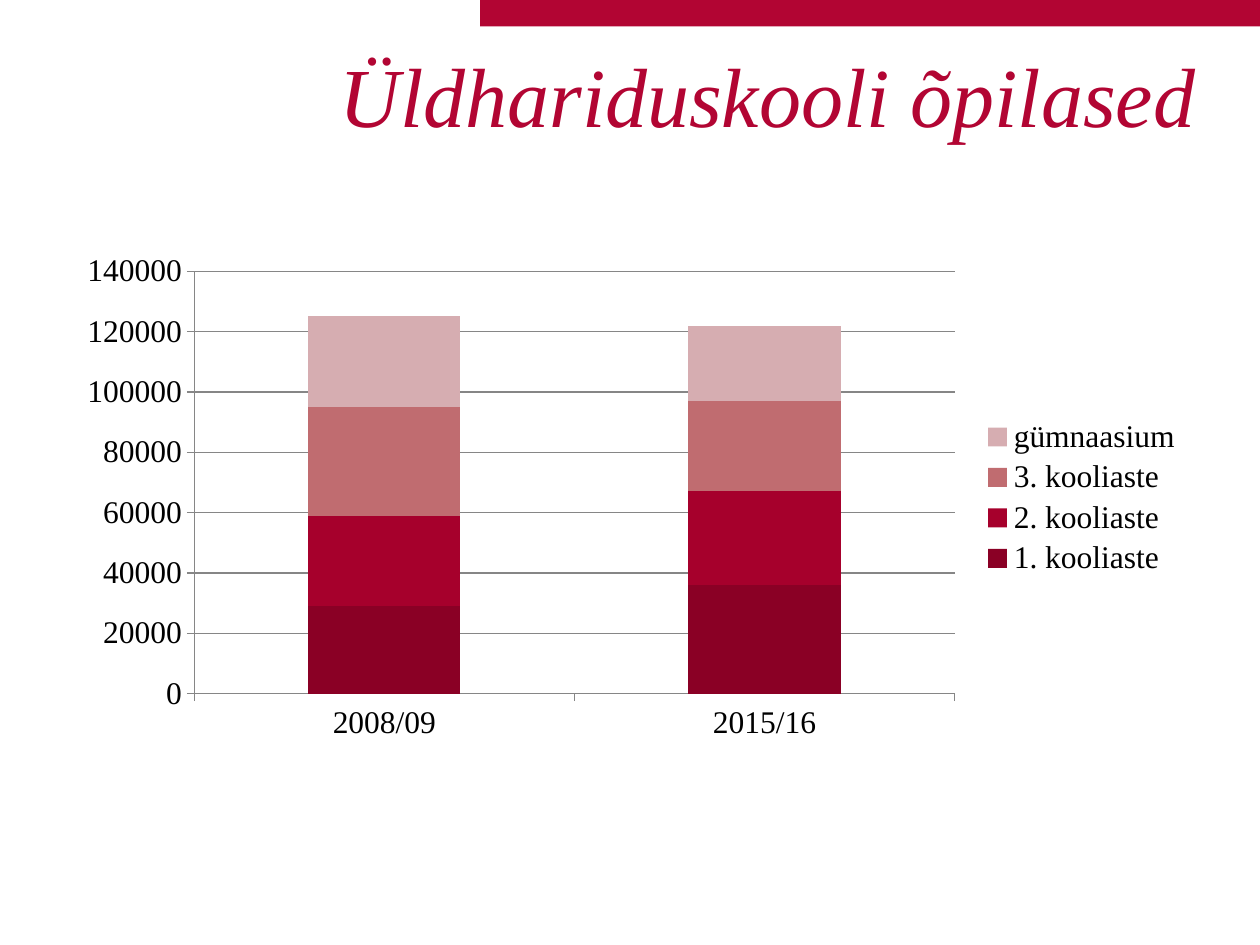
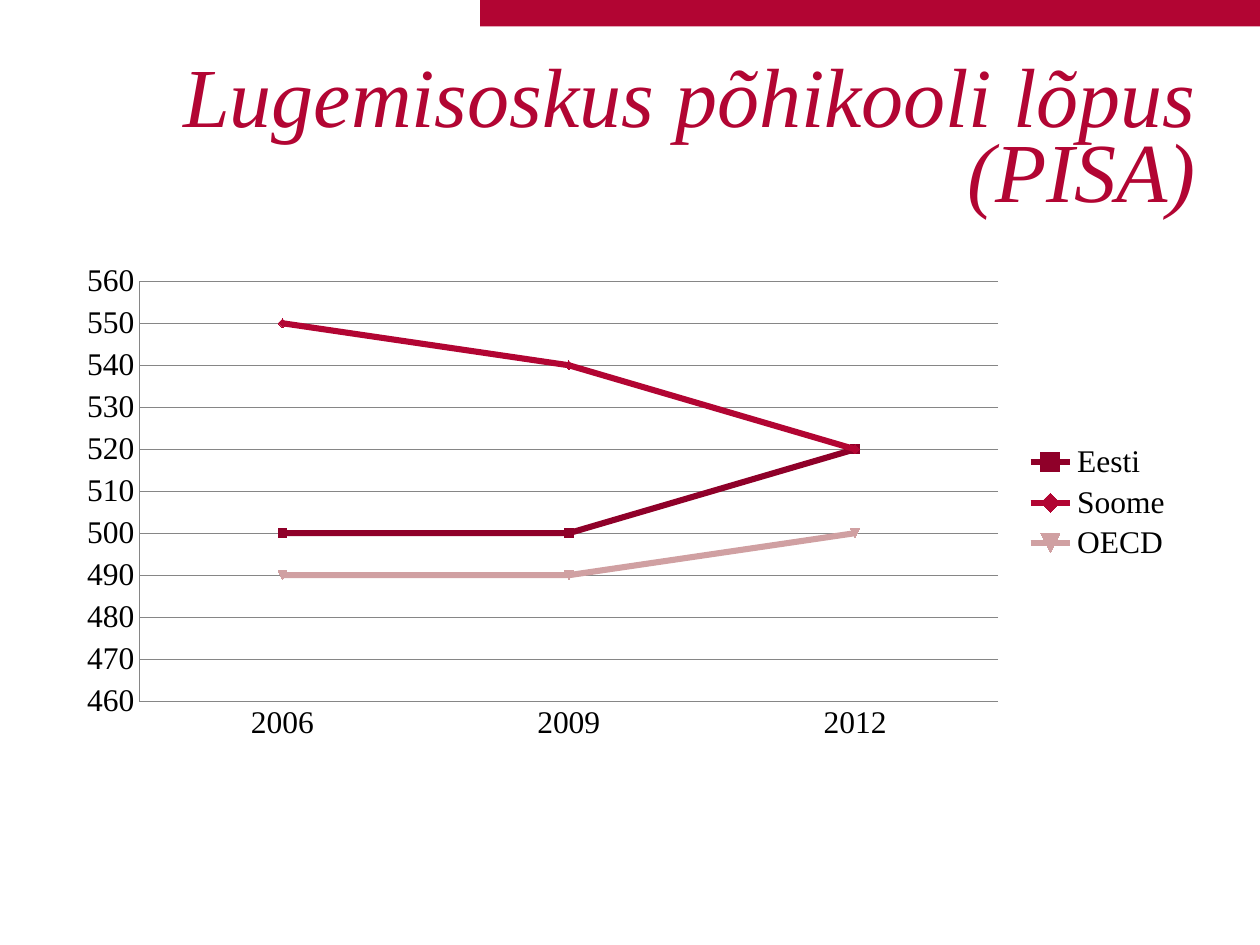
from lxml.etree import SubElement
from pptx import Presentation
from pptx.chart.data import CategoryChartData
from pptx.dml.color import RGBColor
from pptx.enum.chart import XL_CHART_TYPE, XL_LEGEND_POSITION, XL_TICK_MARK
from pptx.enum.shapes import MSO_SHAPE
from pptx.enum.text import PP_ALIGN
from pptx.oxml.ns import qn
from pptx.util import Inches, Pt

FONT = "Times New Roman"
HUES = {
    "brand": "B20533", "text": "000000", "grid": "868686",
    "wine": "8A0025", "red": "A6002C", "rose": "C06C70", "pale": "D6ADB1",
    "dark": "8F0029", "pink": "D0A0A2",
}
PUPILS = [
    ("1. kooliaste", (29000, 36000), "wine"),
    ("2. kooliaste", (30000, 31000), "red"),
    ("3. kooliaste", (36000, 30000), "rose"),
    ("gümnaasium", (30000, 25000), "pale"),
]
SCORES = [
    ("Eesti", (500, 500, 520), "dark"),
    ("Soome", (550, 540, 520), "brand"),
    ("OECD", (490, 490, 500), "pink"),
]


def hue(name):
    """Return a named colour."""
    return RGBColor.from_string(HUES[name])


def paint(fill, name):
    """Make a fill solid in a named colour."""
    fill.solid()
    fill.fore_color.rgb = hue(name)


def style(font, size, name):
    """Set the face, size and colour of a font."""
    font.name, font.size = FONT, Pt(size)
    font.color.rgb = hue(name)


def add_page(deck, title):
    """Add a slide with the top band and a title."""
    page = deck.slides.add_slide(deck.slide_layouts[6])
    band = page.shapes.add_shape(
        MSO_SHAPE.RECTANGLE, Inches(3.81), 0, Inches(6.19), Inches(0.21))
    band.shadow.inherit = False
    paint(band.fill, "brand")
    band.line.fill.background()
    box = page.shapes.add_textbox(Inches(0.5), Inches(0.53), Inches(8.99), Inches(1.24))
    frame = box.text_frame
    frame.word_wrap = True
    frame.margin_left = frame.margin_right = frame.margin_top = frame.margin_bottom = 0
    para = frame.paragraphs[0]
    para.text = title
    para.alignment, para.line_spacing = PP_ALIGN.RIGHT, 0.75
    style(para.font, 48, "brand")
    para.font.italic = True
    return page


def place_plot(chart, spot):
    """Fix the inner plot area as fractions of the chart."""
    area = chart._chartSpace.chart.plotArea
    for old in area.findall(qn("c:layout")):
        area.remove(old)
    layout = SubElement(area, qn("c:layout"))
    area.insert(0, layout)
    manual = SubElement(layout, qn("c:manualLayout"))
    parts = [("layoutTarget", "inner"), ("xMode", "edge"), ("yMode", "edge")]
    for tag, val in parts + list(zip("xywh", spot)):
        SubElement(manual, qn("c:" + tag)).set("val", str(val))


def add_graph(page, kind, box, cats, rows, span, tick, spot):
    """Add a chart with a legend, grid lines and a fixed scale."""
    data = CategoryChartData(number_format="General")
    data.categories = cats
    for name, vals, _ in rows:
        data.add_series(name, vals)
    chart = page.shapes.add_chart(kind, *map(Inches, box), data).chart
    chart.has_title = False
    style(chart.font, 18, "text")
    chart.has_legend = True
    chart.legend.position = XL_LEGEND_POSITION.RIGHT
    chart.legend.include_in_layout = False
    scale = chart.value_axis
    scale.minimum_scale, scale.maximum_scale, scale.major_unit = span
    scale.has_major_gridlines = True
    for axis in (chart.category_axis, scale):
        axis.major_tick_mark, axis.minor_tick_mark = tick, XL_TICK_MARK.NONE
    for item in (chart.category_axis, scale, scale.major_gridlines):
        item.format.line.color.rgb = hue("grid")
        item.format.line.width = Pt(0.75)
    chart.plots[0].vary_by_categories = False
    place_plot(chart, spot)
    return chart.plots[0]


def add_bars(page):
    """Add the stacked columns of pupils by school stage."""
    plot = add_graph(
        page, XL_CHART_TYPE.COLUMN_STACKED, (0.51, 1.94, 8.98, 4.02),
        ["2008/09", "2015/16"], PUPILS, (0, 140000, 20000),
        XL_TICK_MARK.OUTSIDE, (0.115, 0.053, 0.672, 0.834))
    plot.gap_width, plot.overlap = 150, 100
    for bar, (_, _, tint) in zip(plot.series, PUPILS):
        paint(bar.format.fill, tint)


def add_lines(page):
    """Add the lines of reading scores."""
    plot = add_graph(
        page, XL_CHART_TYPE.LINE_MARKERS, (0.51, 2.02, 8.9, 3.94),
        ["2006", "2009", "2012"], SCORES, (460, 560, 10),
        XL_TICK_MARK.NONE, (0.067, 0.054, 0.766, 0.846))
    for line, (_, _, tint) in zip(plot.series, SCORES):
        line.smooth = False
        line.format.line.color.rgb = hue(tint)
        line.format.line.width = Pt(3.5)
        line.marker.size = 5
        paint(line.marker.format.fill, tint)
        line.marker.format.line.color.rgb = hue(tint)


def main():
    """Build and save the deck."""
    deck = Presentation()
    deck.slide_width, deck.slide_height = Inches(10), Inches(7.5)
    add_bars(add_page(deck, "Üldhariduskooli õpilased"))
    add_lines(add_page(deck, "Lugemisoskus põhikooli lõpus (PISA)"))
    deck.save("out.pptx")


if __name__ == "__main__":
    main()
